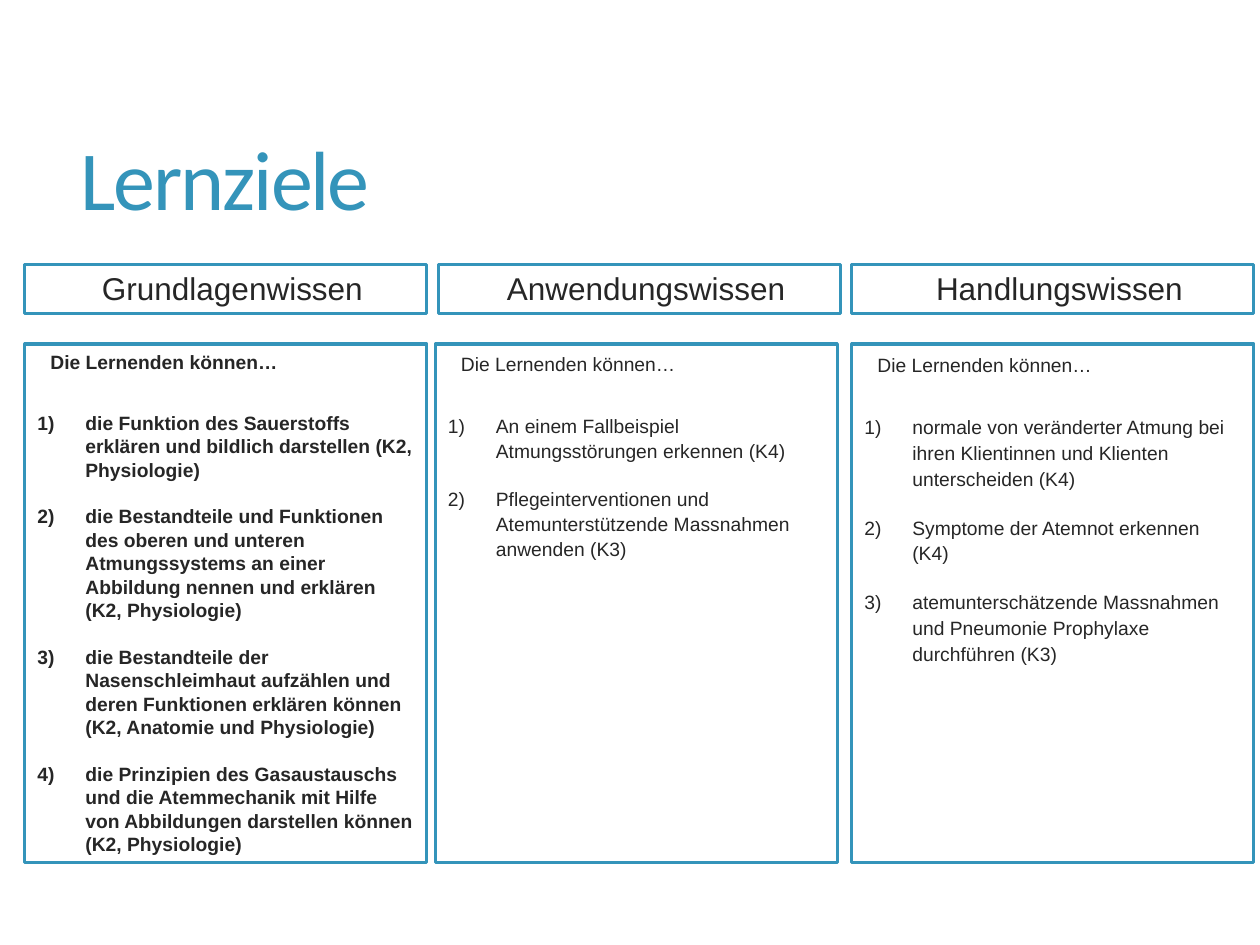
from pptx import Presentation
from pptx.dml.color import RGBColor
from pptx.enum.shapes import MSO_SHAPE
from pptx.enum.text import MSO_ANCHOR, MSO_AUTO_SIZE, PP_ALIGN
from pptx.oxml.ns import qn
from pptx.util import Pt
from lxml import etree

RECT = MSO_SHAPE.RECTANGLE
TOP, MIDDLE = MSO_ANCHOR.TOP, MSO_ANCHOR.MIDDLE
LEFT, CENTER = PP_ALIGN.LEFT, PP_ALIGN.CENTER

# Content
TITLE = "Lernziele"
INTRO = "Die Lernenden können…"
COLUMNS = [
    {"head": "Grundlagenwissen", "bold": True, "spacing": 1.02, "shift": 0, "goals": [
        "die Funktion des Sauerstoffs erklären und bildlich darstellen (K2, Physiologie)",
        "die Bestandteile und Funktionen des oberen und unteren Atmungssystems an einer "
        "Abbildung nennen und erklären (K2, Physiologie)",
        "die Bestandteile der Nasenschleimhaut aufzählen und deren Funktionen erklären "
        "können (K2, Anatomie und Physiologie)",
        "die Prinzipien des Gasaustauschs und die Atemmechanik mit Hilfe von Abbildungen "
        "darstellen können (K2, Physiologie)"]},
    {"head": "Anwendungswissen", "bold": False, "spacing": 1.09, "shift": -3, "goals": [
        "An einem Fallbeispiel Atmungsstörungen erkennen (K4)",
        "Pflegeinterventionen und Atemunterstützende Massnahmen anwenden (K3)"]},
    {"head": "Handlungswissen", "bold": False, "spacing": 1.12, "shift": 0, "goals": [
        "normale von veränderter Atmung bei ihren Klientinnen und Klienten unterscheiden (K4)",
        "Symptome der Atemnot erkennen (K4)",
        "atemunterschätzende Massnahmen und Pneumonie Prophylaxe durchführen (K3)"]},
]

THEME = {
    "accent": RGBColor(0x34, 0x94, 0xBA), "text": RGBColor(0x26, 0x26, 0x26),
    "title_font": "Calibri", "body_font": "Arial",
    "title": Pt(48), "head": Pt(18), "body": Pt(11), "line": Pt(1.75),
}

# Layout in px
PX = 914400 / 126
COL_X, COL_STEP, COL_W = 25, 413.5, 402
HEAD_Y, HEAD_H = 265, 49
BODY_Y, BODY_H = 344, 519
INTRO_INDENT, GOAL_INDENT = 13, 48


def px(n):
    return round(n * PX)


def add_box(s, x, y, h):
    sp = s.shapes.add_shape(RECT, px(x), px(y), px(COL_W), px(h))
    sp.shadow.inherit = False
    sp.fill.background()
    sp.line.color.rgb = THEME["accent"]
    sp.line.width = THEME["line"]
    tf = sp.text_frame
    tf.word_wrap = True
    tf.vertical_anchor = TOP
    return tf


def set_font(p, name, size, color, bold=False):
    p.font.name, p.font.size, p.font.bold = name, size, bold
    p.font.color.rgb = color


def write(p, text, size, spacing, indent, bold=False, align=LEFT, after=0, numbered=False):
    p.text = text
    p.alignment = align
    p.line_spacing = spacing
    p.space_before, p.space_after = Pt(13), Pt(after)
    set_font(p, THEME["body_font"], size, THEME["text"], bold)
    pPr = p._p.get_or_add_pPr()
    pPr.set("marL", str(px(indent)))
    if numbered:
        pPr.set("indent", str(-px(indent)))
        number = etree.Element(qn("a:buAutoNum"), type="arabicParenR")
        pPr.find(qn("a:defRPr")).addprevious(number)


prs = Presentation()
prs.slide_width, prs.slide_height = px(1260), px(945)
s = prs.slides.add_slide(prs.slide_layouts[5])

# Title
title = s.shapes.title
title.left, title.top, title.width, title.height = px(68), px(69), px(1114), px(228)
tf = title.text_frame
tf.text = TITLE
tf.auto_size = MSO_AUTO_SIZE.NONE
tf.vertical_anchor = MIDDLE
p = tf.paragraphs[0]
p.alignment, p.line_spacing = LEFT, 0.9
set_font(p, THEME["title_font"], THEME["title"], THEME["accent"])
p.runs[0].font._element.set("spc", "-120")

# Columns: heading box above a box of numbered goals
for i, col in enumerate(COLUMNS):
    x = COL_X + i * COL_STEP
    head = add_box(s, x, HEAD_Y, HEAD_H)
    write(head.paragraphs[0], col["head"], THEME["head"], 0.97, INTRO_INDENT, align=CENTER)

    body = add_box(s, x + col["shift"], BODY_Y, BODY_H)
    style = (THEME["body"], col["spacing"])
    write(body.paragraphs[0], INTRO, *style, INTRO_INDENT, col["bold"], after=8)
    for goal in col["goals"]:
        write(body.add_paragraph(), goal, *style, GOAL_INDENT, col["bold"], numbered=True)

prs.save("out.pptx")
